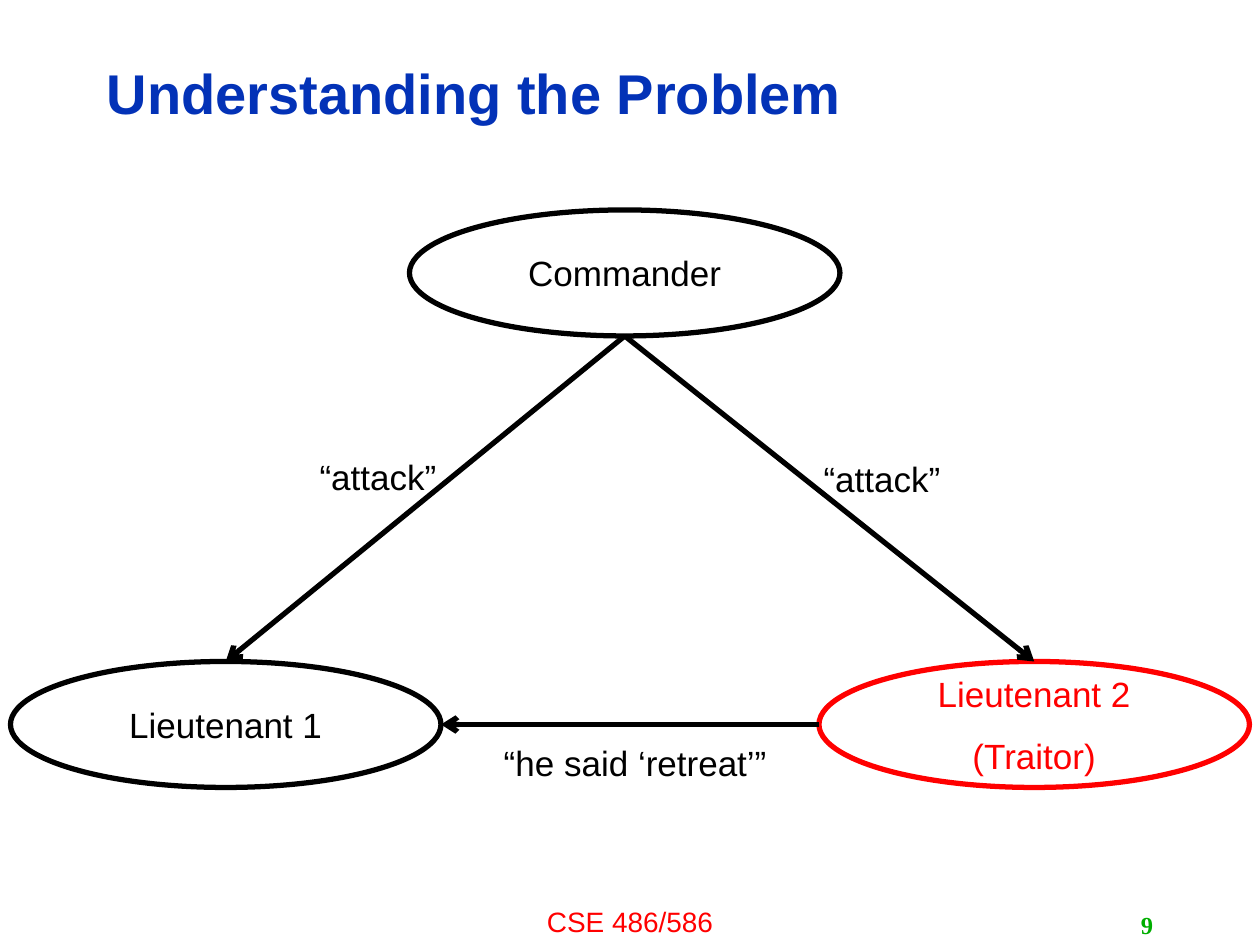
"""Build the slide on the traitor lieutenant, on a grid of 120 columns by 90 rows."""
from lxml.etree import SubElement
from pptx import Presentation
from pptx.dml.color import RGBColor
from pptx.enum.shapes import MSO_CONNECTOR, MSO_SHAPE
from pptx.enum.text import MSO_ANCHOR, PP_ALIGN
from pptx.oxml.ns import qn
from pptx.util import Inches, Pt

UNIT = Inches(1) // 12
BLACK, RED, BLUE, GREEN, WHITE = "000000", "FF0000", "0332B7", "00AE00", "FFFFFF"


def tint(code):
    return RGBColor.from_string(code)


def write(shape, text, size=20, color=BLACK, font="Arial", bold=False,
          align=PP_ALIGN.CENTER, anchor=MSO_ANCHOR.MIDDLE, wrap=True, lead=None):
    frame = shape.text_frame
    frame.word_wrap = wrap
    frame.vertical_anchor = anchor
    frame.text = text
    for row, para in enumerate(frame.paragraphs):
        para.alignment = align
        para.line_spacing = lead
        para.space_before = Pt(size * 0.57 if row else 0)
        para.font.size = Pt(size)
        para.font.name = font
        para.font.bold = bold
        para.font.color.rgb = tint(color)


deck = Presentation()
deck.slide_width, deck.slide_height = 120 * UNIT, 90 * UNIT
slide = deck.slides.add_slide(deck.slide_layouts[6])
shapes = slide.shapes

wide, high = 41, 12
nodes = [
    (39, 20, "Commander", BLACK),
    (1, 63, "Lieutenant 1", BLACK),
    (78, 63, "Lieutenant 2\n(Traitor)", RED),
]
for left, top, text, color in nodes:
    oval = shapes.add_shape(MSO_SHAPE.OVAL, left * UNIT, top * UNIT, wide * UNIT, high * UNIT)
    oval.shadow.inherit = False
    oval.fill.solid()
    oval.fill.fore_color.rgb = tint(WHITE)
    oval.line.color.rgb = tint(color)
    oval.line.width = Pt(3)
    write(oval, text, color=color)

half = wide / 2
chief, first, second = [(left, top) for left, top, *rest in nodes]
base = (chief[0] + half, chief[1] + high)
arrows = [
    (base, (first[0] + half, first[1])),
    (base, (second[0] + half, second[1])),
    ((second[0], second[1] + high / 2), (first[0] + wide, first[1] + high / 2)),
]
for start, end in arrows:
    ends = [int(part * UNIT) for part in start + end]
    arrow = shapes.add_connector(MSO_CONNECTOR.STRAIGHT, *ends)
    arrow.line.color.rgb = tint(BLACK)
    arrow.line.width = Pt(3)
    SubElement(arrow.line._get_or_add_ln(), qn("a:tailEnd"), type="arrow")
    SubElement(arrow._element.spPr, qn("a:effectLst"))

order = dict(anchor=MSO_ANCHOR.TOP)
labels = [
    (9, 4.3, 95.8, 9.7, "Understanding the Problem",
     dict(size=32, color=BLUE, bold=True, align=PP_ALIGN.LEFT, lead=0.9)),
    (28, 42.75, 16, 5.25, "“attack”", order),
    (76, 43, 16, 5.25, "“attack”", order),
    (44, 70, 33, 5.25, "“he said ‘retreat’”", order),
    (40, 85.6, 40, 4.4, "CSE 486/586", dict(order, size=16, color=RED)),
    (86, 86.2, 25, 3.8, "9",
     dict(size=14, color=GREEN, font="Times New Roman", bold=True, align=PP_ALIGN.RIGHT)),
]
for *place, text, style in labels:
    write(shapes.add_textbox(*[int(part * UNIT) for part in place]), text, **style)

deck.save("out.pptx")
